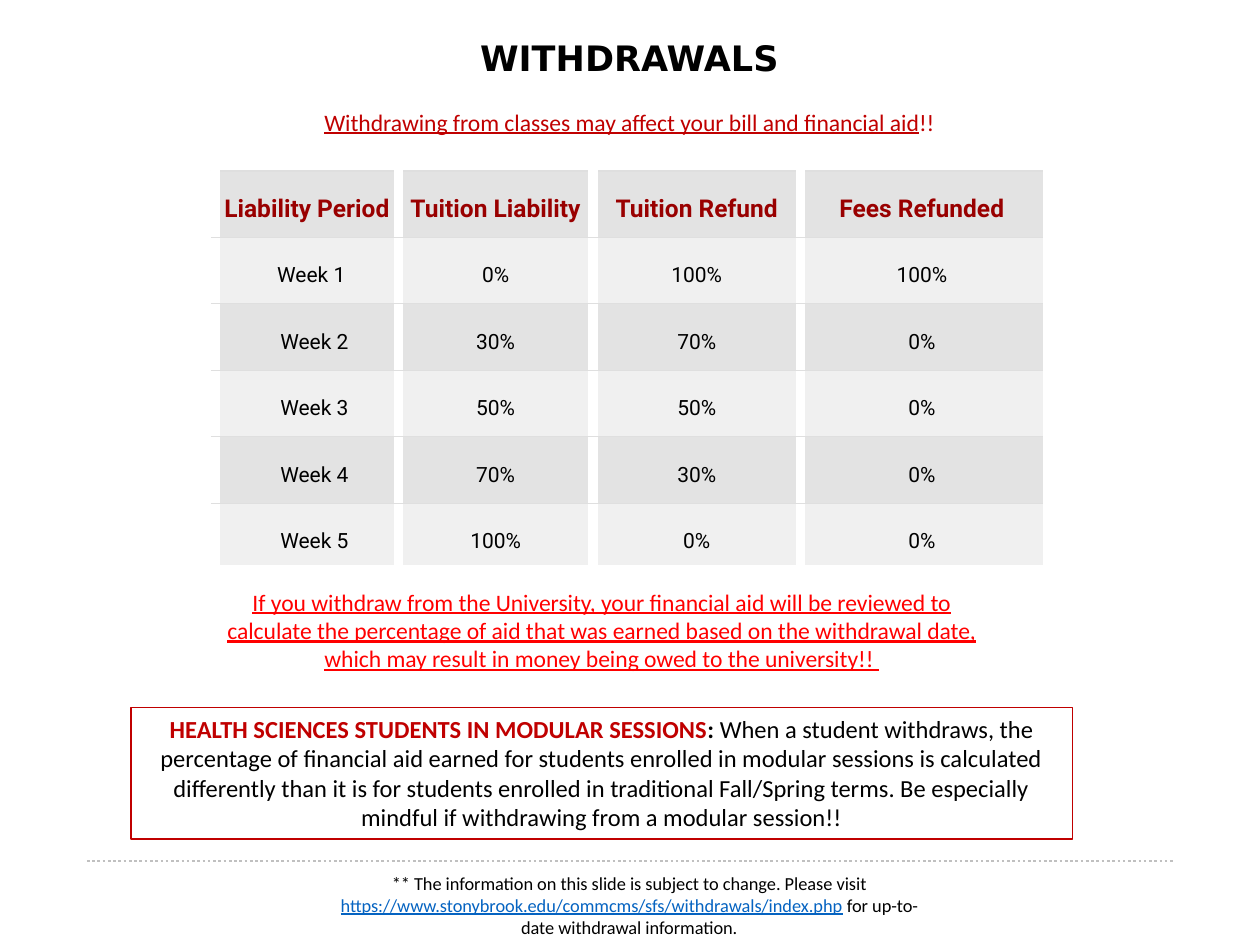
from lxml import etree
from pptx import Presentation, util as u
from pptx.dml.color import RGBColor
from pptx.enum import dml, shapes, text
from pptx.oxml.ns import qn

W, H = 10, 7.5
COLORS = {
    "black": "000000", "red": "FF0000", "crimson": "C00000", "maroon": "990000",
    "link": "0563C1", "white": "FFFFFF", "rule": "C0C0C0", "border": "DFDFDF",
    "dark_row": "E3E3E3", "light_row": "F0F0F0",
}
ROWS = [
    ["Liability Period", "Tuition Liability", "Tuition Refund", "Fees Refunded"],
    ["Week 1", "0%", "100%", "100%"],
    ["Week 2", "30%", "70%", "0%"],
    ["Week 3", "50%", "50%", "0%"],
    ["Week 4", "70%", "30%", "0%"],
    ["Week 5", "100%", "0%", "0%"],
]
COLUMN_SHARES = [0.221, 0.235, 0.251, 0.293]


def rgb(name):
    return RGBColor.from_string(COLORS[name])


def share(x, y, w, h):
    return [u.Inches(v) for v in (x * W, y * H, w * W, h * H)]


def write(p, runs, size, face="Calibri"):
    p.alignment = text.PP_ALIGN.CENTER
    for words, color, bold, underline in runs:
        r = p.add_run()
        r.text = words
        r.font.size, r.font.name = u.Pt(size), face
        r.font.bold, r.font.underline = bold, underline
        r.font.color.rgb = rgb(color)


def add_heading(s, box):
    sp = s.shapes.title
    sp.left, sp.top, sp.width, sp.height = box
    tf = sp.text_frame
    tf.word_wrap = True
    tf.auto_size = text.MSO_AUTO_SIZE.NONE
    tf.vertical_anchor = text.MSO_ANCHOR.TOP
    write(tf.paragraphs[0], [("WITHDRAWALS", "black", True, False)], 20, "DejaVu Sans")
    p = tf.add_paragraph()
    p.space_before = u.Pt(16.5)
    write(p, [("Withdrawing from classes may affect your bill and financial aid",
               "crimson", False, True), ("!!", "crimson", False, False)], 13.5)


def set_border(cell, side, color, width):
    pr = cell._tc.get_or_add_tcPr()
    ln = etree.Element(qn(f"a:ln{side}"), w=str(u.Pt(width)))
    if color:
        fill = etree.SubElement(ln, qn("a:solidFill"))
        etree.SubElement(fill, qn("a:srgbClr"), val=COLORS[color])
    else:
        etree.SubElement(ln, qn("a:noFill"))
    pr.insert(["L", "R", "T", "B"].index(side), ln)


def add_refund_table(s, box):
    table = s.shapes.add_table(len(ROWS), len(ROWS[0]), *box).table
    table.first_row = table.horz_banding = False
    for column, part in zip(table.columns, COLUMN_SHARES):
        column.width = int(box[2] * part)
    for i, row in enumerate(ROWS):
        table.rows[i].height = int(box[3] / len(ROWS))
        last_row = i == len(ROWS) - 1
        for j, words in enumerate(row):
            cell = table.cell(i, j)
            cell.margin_left = cell.margin_right = cell.margin_bottom = 0
            cell.margin_top = u.Inches(0.08)
            if i and not j:
                cell.margin_left = u.Inches(0.07 if i == 1 else 0.12)
            cell.vertical_anchor = text.MSO_ANCHOR.MIDDLE
            cell.fill.solid()
            cell.fill.fore_color.rgb = rgb("light_row" if i % 2 else "dark_row")
            last_column = j == len(row) - 1
            set_border(cell, "L", "white", 6)
            set_border(cell, "R", None if last_column else "white", 6)
            set_border(cell, "T", "border", 0.75)
            set_border(cell, "B", *(("white", 6) if last_row else ("border", 0.75)))
            write(cell.text_frame.paragraphs[0],
                  [(words, "black" if i else "maroon", not i, False)],
                  12 if i else 14, "Roboto")


def add_note(s, box, runs, size, outline=None):
    sp = s.shapes.add_textbox(*box)
    if outline:
        sp.line.color.rgb = rgb(outline)
        sp.line.width = u.Pt(0.75)
    sp.text_frame.word_wrap = True
    write(sp.text_frame.paragraphs[0], runs, size)


def add_footer_rule(s, box):
    x, y, w, _ = box
    line = s.shapes.add_connector(shapes.MSO_CONNECTOR.STRAIGHT, x, y, x + w, y)
    line.line.color.rgb = rgb("rule")
    line.line.width = u.Pt(1.5)
    line.line.dash_style = dml.MSO_LINE.ROUND_DOT
    etree.SubElement(line._element.spPr, qn("a:effectLst"))


def add_withdrawals_slide(prs):
    s = prs.slides.add_slide(prs.slide_layouts[5])
    add_footer_rule(s, share(0.069, 0.911, 0.863, 0))
    add_heading(s, share(0.171, 0.032, 0.657, 0.149))
    add_refund_table(s, share(0.171, 0.181, 0.657, 0.422))
    add_note(s, share(0.163, 0.615, 0.629, 0.104), [
        ("If you withdraw from the University, your financial aid will be reviewed to "
         "calculate the percentage of aid that was earned based on the withdrawal date, "
         "which may result in money being owed to the university!! ", "red", False, True),
    ], 13.5)
    add_note(s, share(0.249, 0.916, 0.501, 0.084), [
        ("** The information on this slide is subject to change. Please visit ",
         "black", False, False),
        ("https://www.stonybrook.edu/commcms/sfs/withdrawals/index.php", "link", False, True),
        (" for up-to-date withdrawal information.", "black", False, False),
    ], 10.5)
    add_note(s, share(0.104, 0.749, 0.747, 0.139), [
        ("HEALTH SCIENCES STUDENTS IN MODULAR SESSIONS", "crimson", True, False),
        (": ", "black", True, False),
        ("When a student withdraws, the percentage of financial aid earned for students "
         "enrolled in modular sessions is calculated differently than it is for students "
         "enrolled in traditional Fall/Spring terms. Be especially mindful if withdrawing "
         "from a modular session!!", "black", False, False),
    ], 14, "crimson")


def main():
    prs = Presentation()
    prs.slide_width, prs.slide_height = u.Inches(W), u.Inches(H)
    add_withdrawals_slide(prs)
    prs.save("out.pptx")


if __name__ == "__main__":
    main()
